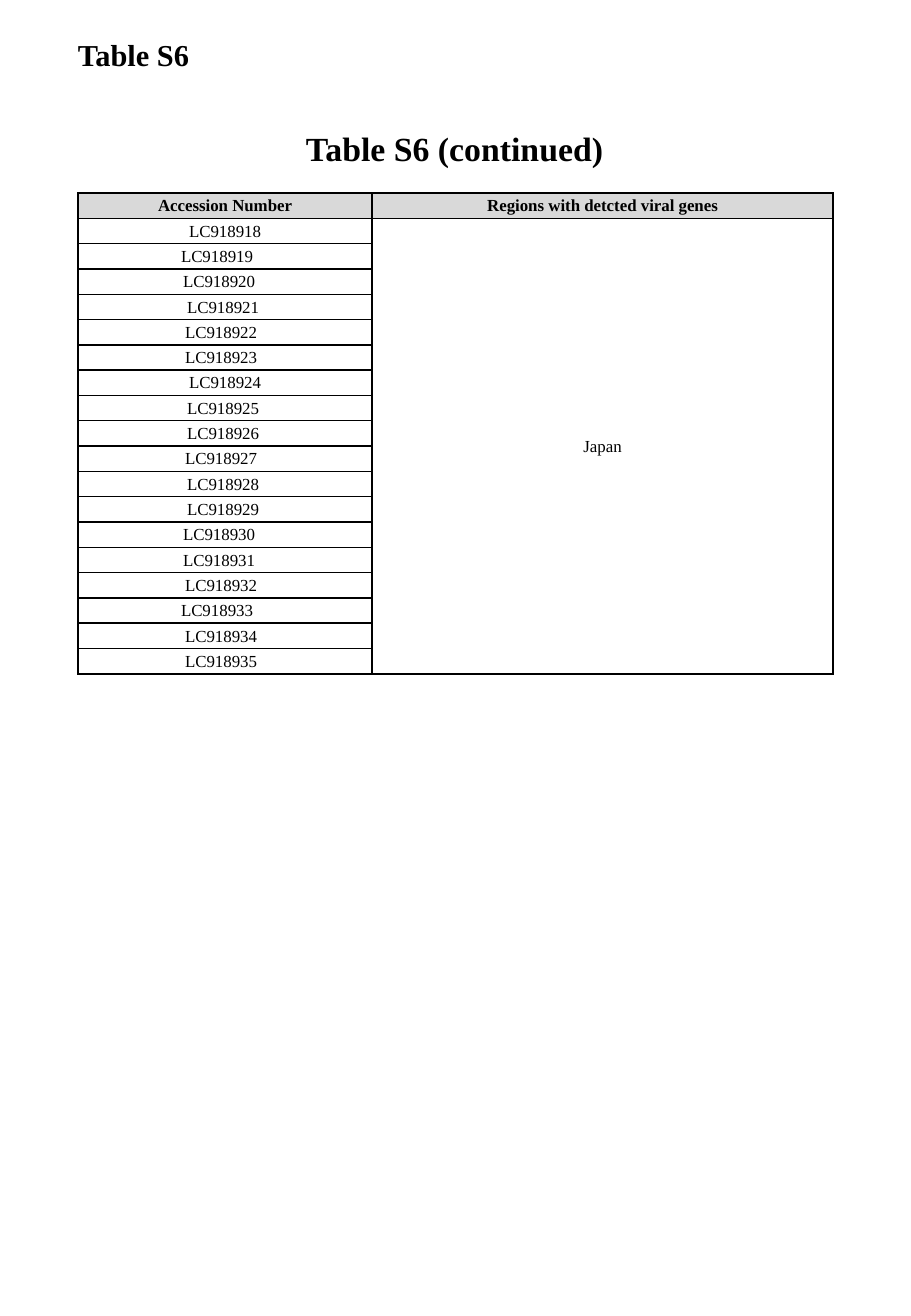
from pptx import Presentation
from pptx.dml.color import RGBColor
from pptx.enum.text import MSO_ANCHOR, PP_ALIGN
from pptx.oxml import parse_xml
from pptx.oxml.ns import nsdecls
from pptx.util import Emu, Pt

HEADERS = ("Accession Number", "Regions with detcted viral genes")
FIRST_ACCESSION = 918918
# One entry per accession: how far its number is indented from the right, in steps
RIGHT_INDENTS = (0, 4, 3, 1, 2, 2, 0, 1, 1, 2, 1, 1, 3, 3, 2, 4, 2, 2)
REGION = "Japan"
TITLES = (
    # text, size name, wraps, (left, top, width, height)
    ("Table S6", "label", True, (66, 30, 197, 49)),
    ("Table S6 (continued)", "title", False, (294, 122, 324, 53)),
)

THEME = {
    "font": "Times New Roman",
    "ink": "000000",
    "header": "D9D9D9",
    "label": 18,
    "title": 20,
    "cell": 10,
    "border": 1,
}

SLIDE_SIZE = (911, 1316)
TABLE_BOX = (78, 193, 755, 481)
COLUMN_WIDTHS = (294, 461)
CELL_MARGIN = 1
INDENT_STEP = 4
PX_PER_INCH = 121.5


def px(length):
    return Emu(round(length * 914400 / PX_PER_INCH))


def add_text(paragraph, text, size, bold):
    run = paragraph.add_run()
    run.text = text
    run.font.name = THEME["font"]
    run.font.size = Pt(THEME[size])
    run.font.bold = bold
    run.font.color.rgb = RGBColor.from_string(THEME["ink"])


def add_borders(cell):
    properties = cell._tc.get_or_add_tcPr()
    for side in ("lnL", "lnR", "lnT", "lnB"):
        properties.append(parse_xml(
            f'<a:{side} {nsdecls("a")} w="{Pt(THEME["border"])}"><a:solidFill>'
            f'<a:srgbClr val="{THEME["ink"]}"/></a:solidFill></a:{side}>'))


def style_cell(cell, is_header):
    add_borders(cell)
    cell.vertical_anchor = MSO_ANCHOR.MIDDLE
    cell.margin_left = cell.margin_right = cell.margin_top = px(CELL_MARGIN)
    cell.margin_bottom = 0
    if is_header:
        cell.fill.solid()
        cell.fill.fore_color.rgb = RGBColor.from_string(THEME["header"])
    else:
        cell.fill.background()


def write_cell(cell, text, bold=False):
    paragraph = cell.text_frame.paragraphs[0]
    paragraph.alignment = PP_ALIGN.CENTER
    add_text(paragraph, text, "cell", bold)


def add_accession_table(slide):
    row_count = len(RIGHT_INDENTS) + 1
    table = slide.shapes.add_table(
        row_count, len(HEADERS), *map(px, TABLE_BOX)).table
    table.first_row = table.horz_banding = False
    for column, width in zip(table.columns, COLUMN_WIDTHS):
        column.width = px(width)
    for row in range(row_count):
        for column in range(len(HEADERS)):
            style_cell(table.cell(row, column), is_header=row == 0)

    for column, header in enumerate(HEADERS):
        write_cell(table.cell(0, column), header, bold=True)
    for index, indent in enumerate(RIGHT_INDENTS):
        cell = table.cell(index + 1, 0)
        cell.margin_right = px(CELL_MARGIN + indent * INDENT_STEP)
        write_cell(cell, f"LC{FIRST_ACCESSION + index}")
    region_cell = table.cell(1, 1)
    region_cell.merge(table.cell(row_count - 1, 1))
    write_cell(region_cell, REGION)


def main():
    presentation = Presentation()
    presentation.slide_width, presentation.slide_height = map(px, SLIDE_SIZE)
    slide = presentation.slides.add_slide(presentation.slide_layouts[6])
    add_accession_table(slide)
    for text, size, wraps, box in TITLES:
        text_frame = slide.shapes.add_textbox(*map(px, box)).text_frame
        text_frame.word_wrap = wraps
        add_text(text_frame.paragraphs[0], text, size, bold=True)
    presentation.save("out.pptx")


if __name__ == "__main__":
    main()
